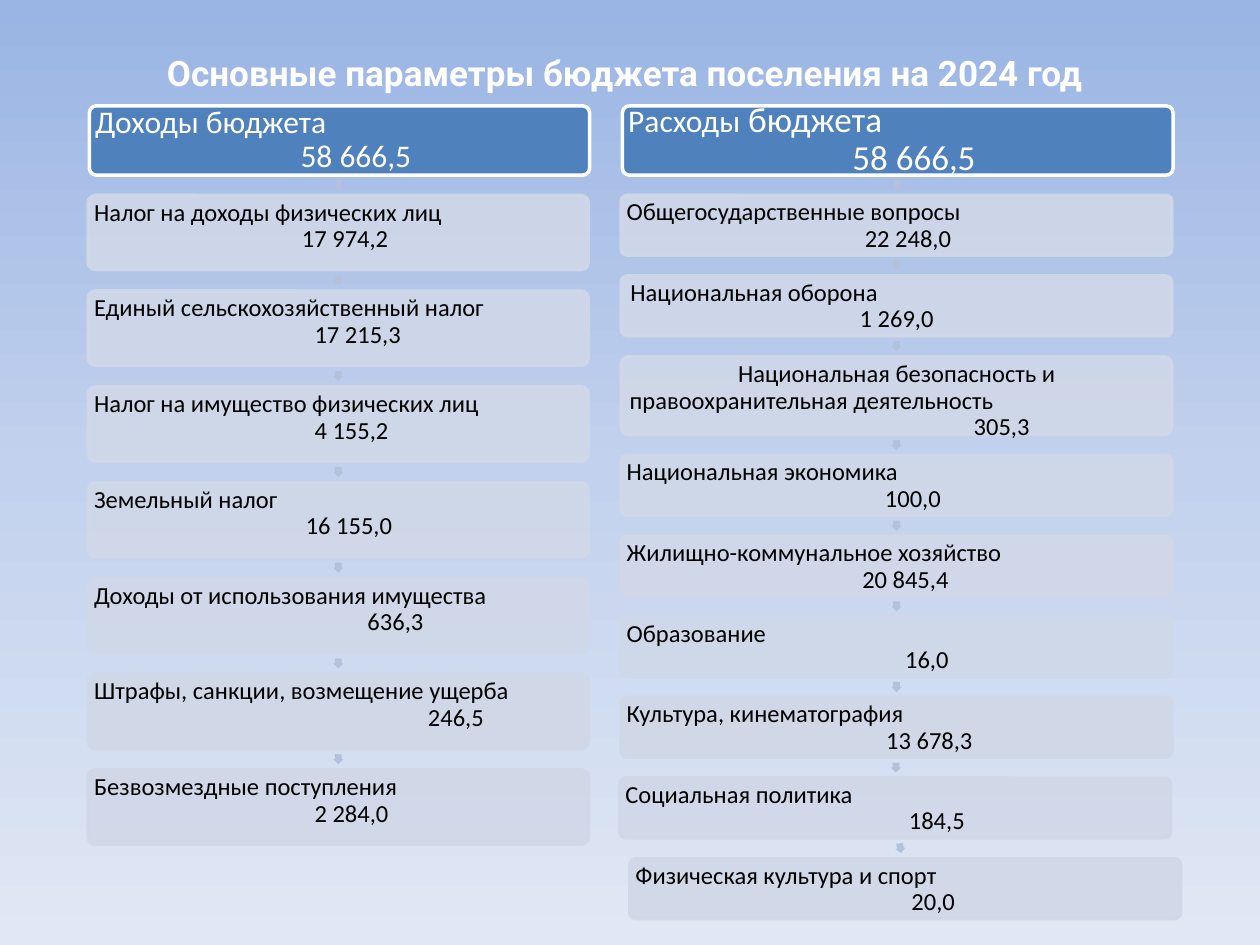
from copy import deepcopy
from math import atan2, degrees

from lxml.etree import SubElement
from pptx import Presentation
from pptx.dml.color import RGBColor
from pptx.enum.shapes import MSO_SHAPE
from pptx.enum.text import MSO_ANCHOR, PP_ALIGN
from pptx.oxml.ns import qn
from pptx.util import Inches, Pt

TITLE = "Основные параметры бюджета поселения на 2024 год"
COLUMNS = [
    {
        "left": 0.7, "width": 3.97, "height": 0.59, "gap": 0.17,
        "header": ([("Доходы бюджета", 18)], ("58 666,5", 18), 1.63),
        "items": [
            {"label": "Налог на доходы физических лиц", "value": "17 974,2", "value_x": 1.66},
            {"label": "Единый сельскохозяйственный налог", "value": "17 215,3", "value_x": 1.76},
            {"label": "Налог на имущество физических лиц", "value": "4 155,2", "value_x": 1.76},
            {"label": "Земельный налог", "value": "16 155,0", "value_x": 1.69},
            {"label": "Доходы от использования имущества", "value": "636,3", "value_x": 2.18},
            {"label": "Штрафы, санкции, возмещение ущерба", "value": "246,5", "value_x": 2.66},
            {"label": "Безвозмездные поступления", "value": "2 284,0", "value_x": 1.76},
        ],
    },
    {
        "left": 4.93, "width": 4.37, "height": 0.475, "gap": 0.165,
        "header": ([("Расходы", 18), (" бюджета", 20)], ("58 666,5", 20), 1.78),
        "items": [
            {"label": "Общегосударственные вопросы", "value": "22 248,0", "value_x": 1.9},
            {"label": "Национальная оборона", "value": "1 269,0", "value_x": 1.86, "label_x": 0.04},
            {"label": "Национальная безопасность и правоохранительная деятельность",
             "value": "305,3", "value_x": 2.76, "label_x": 0.03, "first_line": 0.86, "height": 0.62},
            {"label": "Национальная экономика", "value": "100,0", "value_x": 2.06},
            {"label": "Жилищно-коммунальное хозяйство", "value": "20 845,4", "value_x": 1.88},
            {"label": "Образование", "value": "16,0", "value_x": 2.22},
            {"label": "Культура, кинематография", "value": "13 678,3", "value_x": 2.07},
            {"label": "Социальная политика", "value": "184,5", "value_x": 2.26, "shift": -0.01},
            {"label": "Физическая культура и спорт", "value": "20,0", "value_x": 2.2, "shift": 0.07},
        ],
    },
]

THEME = {
    "background": ["9AB5E4", "C2D1ED", "E1E8F5"],
    "header": "4F81BD", "item": "D0D8E8", "arrow": "B3C1DB",
    "light": "FFFFFF", "dark": "000000",
    "title_font": "Roboto", "font": "Calibri",
    "title_size": 20, "item_size": 14,
}
HEADER_TOP, HEADER_HEIGHT, FIRST_ITEM_TOP = 0.84, 0.55, 1.55
ARROW = 0.08


def color(name):
    return RGBColor.from_string(THEME[name])


def write(p, text, size, fill="dark", font="font", bold=False):
    r = p.add_run()
    r.text = text
    r.font.size = Pt(size)
    r.font.name = THEME[font]
    r.font.bold = bold
    r.font.color.rgb = color(fill)


def format_line(p, left=0, first=0):
    p.alignment = PP_ALIGN.LEFT
    p.line_spacing = 0.9
    ppr = p._p.get_or_add_pPr()
    ppr.set("marL", str(Inches(left)))
    ppr.set("indent", str(Inches(first)))


def set_frame(tf, inset, anchor):
    tf.word_wrap = True
    tf.vertical_anchor = anchor
    tf.margin_left = tf.margin_right = tf.margin_top = tf.margin_bottom = Inches(inset)


def add_block(s, kind, x, y, w, h, fill):
    sp = s.shapes.add_shape(kind, Inches(x), Inches(y), Inches(w), Inches(h))
    sp.shadow.inherit = False
    sp.fill.solid()
    sp.fill.fore_color.rgb = color(fill)
    sp.line.fill.background()
    return sp


def add_box(s, x, y, w, h, fill, line, inset, anchor):
    sp = add_block(s, MSO_SHAPE.ROUNDED_RECTANGLE, x, y, w, h, fill)
    sp.adjustments[0] = 0.1
    sp.line.color.rgb = color(line)
    sp.line.width = Pt(2)
    set_frame(sp.text_frame, inset, anchor)
    return sp


def add_header(s, column):
    labels, (value, size), value_x = column["header"]
    sp = add_box(s, column["left"] + 0.01, HEADER_TOP, column["width"], HEADER_HEIGHT,
                 "header", "light", 0.03, MSO_ANCHOR.MIDDLE)
    p = sp.text_frame.paragraphs[0]
    format_line(p)
    for text, label_size in labels:
        write(p, text, label_size, fill="light")
    p = sp.text_frame.add_paragraph()
    format_line(p, value_x)
    write(p, value, size, fill="light")


def add_item(s, x, y, w, h, item):
    sp = add_box(s, x, y, w, h, "item", "item", 0.02, MSO_ANCHOR.TOP)
    for clr in list(sp._element.spPr.iter(qn("a:srgbClr"))):
        SubElement(clr, qn("a:alpha")).set("val", "90000")
    p = sp.text_frame.paragraphs[0]
    format_line(p, item.get("label_x", 0.01), item.get("first_line", 0))
    write(p, item["label"], THEME["item_size"])
    p = sp.text_frame.add_paragraph()
    format_line(p, item["value_x"])
    write(p, item["value"], THEME["item_size"])


def add_arrow(s, start, end, y):
    x = (start[0] + end[0]) / 2
    sp = add_block(s, MSO_SHAPE.RIGHT_ARROW, x - ARROW / 2, y - ARROW / 2, ARROW, ARROW, "arrow")
    sp.adjustments[0] = 0.667
    sp.rotation = degrees(atan2(end[1] - start[1], end[0] - start[0]))


def add_column(s, column):
    add_header(s, column)
    w = column["width"]
    bottom = HEADER_TOP + HEADER_HEIGHT
    previous = (column["left"] + 0.01 + w / 2, HEADER_TOP + HEADER_HEIGHT / 2)
    y = FIRST_ITEM_TOP
    for item in column["items"]:
        x = column["left"] + item.get("shift", 0)
        h = item.get("height", column["height"])
        center = (x + w / 2, y + h / 2)
        add_arrow(s, previous, center, (bottom + y) / 2)
        add_item(s, x, y, w, h, item)
        previous, bottom = center, y + h
        y = bottom + column["gap"]


def set_background(s):
    fill = s.background.fill
    fill.gradient()
    fill.gradient_angle = 270
    first = next(s._element.iter(qn("a:gs")))
    first.addnext(deepcopy(first))
    for i, (stop, rgb) in enumerate(zip(fill.gradient_stops, THEME["background"])):
        stop.position = i / 2
        stop.color.rgb = RGBColor.from_string(rgb)


def main():
    prs = Presentation()
    prs.slide_width, prs.slide_height = Inches(10), Inches(7.5)
    s = prs.slides.add_slide(prs.slide_layouts[6])
    set_background(s)
    tf = s.shapes.add_textbox(Inches(0.46), Inches(0.26), Inches(9), Inches(0.63)).text_frame
    set_frame(tf, 0.05, MSO_ANCHOR.MIDDLE)
    p = tf.paragraphs[0]
    p.alignment = PP_ALIGN.CENTER
    write(p, TITLE, THEME["title_size"], fill="light", font="title_font", bold=True)
    for column in COLUMNS:
        add_column(s, column)
    prs.save("out.pptx")


if __name__ == "__main__":
    main()
